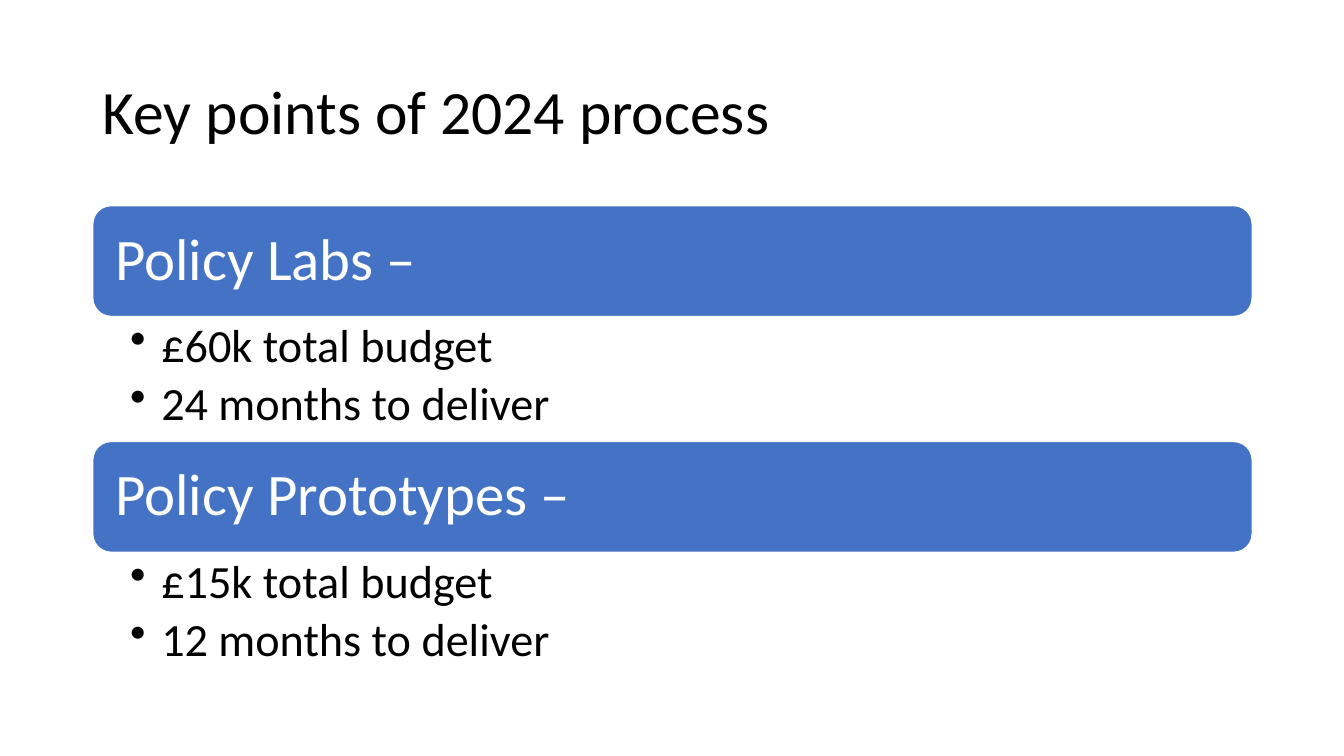
import pptx
import pptx.dml.color
import pptx.enum.shapes
import pptx.enum.text
import pptx.oxml.ns
import pptx.util
from dataclasses import dataclass
from lxml import etree

ANCHOR = pptx.enum.text.MSO_ANCHOR
ALIGN = pptx.enum.text.PP_ALIGN
ROUND = pptx.enum.shapes.MSO_SHAPE.ROUNDED_RECTANGLE
PX = 9144  # EMU per px, 100 px to the inch


@dataclass(frozen=True)
class Theme:
    font: str = "Calibri"
    ink: str = "000000"
    paper: str = "FFFFFF"
    bar: str = "4472C4"
    title: int = 44
    head: int = 42
    point: int = 33


def color(code):
    return pptx.dml.color.RGBColor.from_string(code)


def apply(item, values):
    for name, value in values.items():
        setattr(item, name, value)


class Deck:
    def __init__(self, theme, width, height):
        self.theme = theme
        self.file = pptx.Presentation()
        apply(self.file, {"slide_width": width * PX, "slide_height": height * PX})
        self.slide = self.file.slides.add_slide(self.file.slide_layouts[6])

    def label(self, shape, lines, size, ink, pad, anchor, gap=0):
        """Fill a shape with styled paragraphs."""
        frame = shape.text_frame
        left, top, right, bottom = (side * PX for side in pad)
        apply(frame, {
            "word_wrap": True, "vertical_anchor": anchor,
            "margin_left": left, "margin_top": top,
            "margin_right": right, "margin_bottom": bottom,
        })
        frame.text = "\n".join(lines)
        for para in frame.paragraphs:
            apply(para, {"alignment": ALIGN.LEFT, "line_spacing": 0.9,
                         "space_after": pptx.util.Pt(gap)})
            font = para.runs[0].font
            apply(font, {"name": self.theme.font, "size": pptx.util.Pt(size)})
            font.color.rgb = color(ink)
        return frame.paragraphs

    def text(self, box, *style):
        shape = self.slide.shapes.add_textbox(*(n * PX for n in box))
        return self.label(shape, *style)

    def title(self, box, words):
        self.text(box, [words], self.theme.title, self.theme.ink,
                  (10, 5, 10, 5), ANCHOR.MIDDLE)

    def bar(self, box, words):
        shape = self.slide.shapes.add_shape(ROUND, *(n * PX for n in box))
        shape.shadow.inherit = False
        shape.fill.solid()
        shape.fill.fore_color.rgb = color(self.theme.bar)
        shape.line.color.rgb = color(self.theme.paper)
        shape.line.width = pptx.util.Pt(1)
        self.label(shape, [words], self.theme.head, self.theme.paper,
                   (17, 17, 17, 17), ANCHOR.MIDDLE)

    def points(self, box, lines):
        paras = self.text(box, lines, self.theme.point, self.theme.ink,
                          (37, 6, 33, 6), ANCHOR.TOP, 6)
        for para in paras:
            props = para._p.get_or_add_pPr()
            props.set("marL", str(31 * PX))
            props.set("indent", str(-31 * PX))
            mark = etree.SubElement(props, pptx.oxml.ns.qn("a:buChar"))
            mark.set("char", "•")


def main():
    deck = Deck(Theme(), 1333, 750)
    left, width = 92, 1150

    # Title
    deck.title((left, 41, width, 145), "Key points of 2024 process")

    # Sections: a bar with its points below
    top, tall, deep = 204, 110, 124
    parts = [
        ("Policy Labs –", ["£60k total budget", "24 months to deliver"]),
        ("Policy Prototypes –", ["£15k total budget", "12 months to deliver"]),
    ]
    for row, (head, lines) in enumerate(parts):
        y = top + row * (tall + deep)
        deck.bar((left, y, width, tall), head)
        deck.points((left, y + tall, width, deep), lines)

    deck.file.save("out.pptx")


if __name__ == "__main__":
    main()
